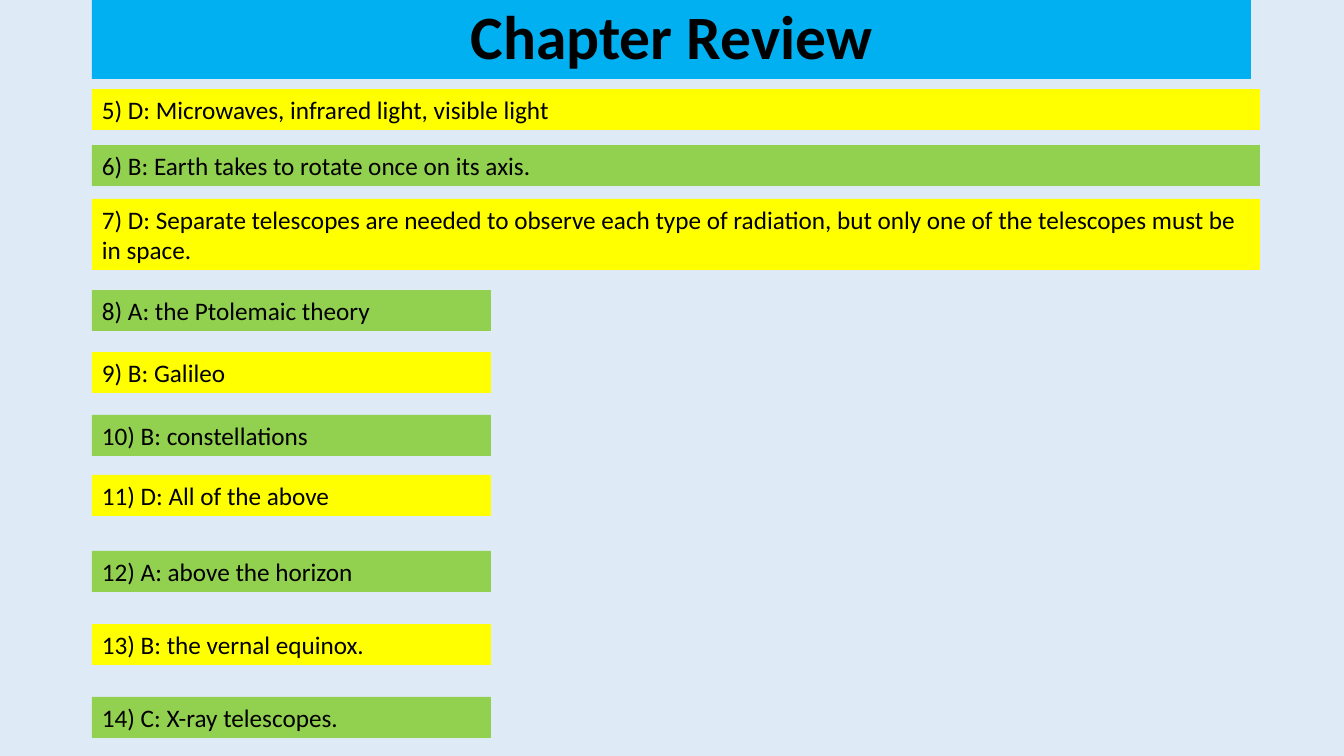
from pptx import Presentation
from pptx.dml.color import RGBColor
from pptx.enum.text import MSO_ANCHOR, MSO_AUTO_SIZE, PP_ALIGN
from pptx.util import Emu, Pt

PX = 914400 / 100.8
FONT = "Calibri"
COLORS = {
    "background": "DEEBF7",
    "banner": "00B0F0",
    "odd": "FFFF00",
    "even": "92D050",
    "text": "000000",
}
LEFT, WIDE, NARROW = 92, 1168, 399
LINE, TWO_LINES = 41, 71

# Number, answer, top, width, height
ANSWERS = [
    (5, "D: Microwaves, infrared light, visible light", 89, WIDE, LINE),
    (6, "B: Earth takes to rotate once on its axis.", 145, WIDE, LINE),
    (7, "D: Separate telescopes are needed to observe each type of radiation, "
        "but only one of the telescopes must be in space.", 199, WIDE, TWO_LINES),
    (8, "A: the Ptolemaic theory", 290, NARROW, LINE),
    (9, "B: Galileo", 352, NARROW, LINE),
    (10, "B: constellations", 415, NARROW, LINE),
    (11, "D: All of the above", 475, NARROW, LINE),
    (12, "A: above the horizon", 551, NARROW, LINE),
    (13, "B: the vernal equinox.", 624, NARROW, LINE),
    (14, "C: X-ray telescopes.", 697, NARROW, LINE),
]


def px(length):
    return Emu(round(length * PX))


def paint(fill, color):
    fill.solid()
    fill.fore_color.rgb = RGBColor.from_string(COLORS[color])


def write(paragraph, text, size, bold=False):
    run = paragraph.add_run()
    run.text = text
    run.font.name = FONT
    run.font.size = Pt(size)
    run.font.bold = bold
    run.font.color.rgb = RGBColor.from_string(COLORS["text"])


def add_banner(slide, left, top, width, height):
    banner = slide.shapes.title
    banner.left, banner.top = px(left), px(top)
    banner.width, banner.height = px(width), px(height)
    paint(banner.fill, "banner")
    frame = banner.text_frame
    frame.auto_size = MSO_AUTO_SIZE.NONE
    frame.vertical_anchor = MSO_ANCHOR.MIDDLE
    heading = frame.paragraphs[0]
    heading.alignment = PP_ALIGN.CENTER
    heading.line_spacing = 0.9
    write(heading, "Chapter Review", 44, bold=True)


def add_answer(slide, number, answer, left, top, width, height):
    strip = slide.shapes.add_textbox(px(left), px(top), px(width), px(height))
    paint(strip.fill, "odd" if number % 2 else "even")
    frame = strip.text_frame
    frame.word_wrap = True
    frame.auto_size = MSO_AUTO_SIZE.SHAPE_TO_FIT_TEXT
    write(frame.paragraphs[0], f"{number}) {answer}", 18)


def main():
    deck = Presentation()
    deck.slide_width, deck.slide_height = px(1344), px(756)
    slide = deck.slides.add_slide(deck.slide_layouts.get_by_name("Title Only"))
    paint(slide.background.fill, "background")

    # Title banner
    add_banner(slide, LEFT, 0, 1159, 79)

    # Answer strips, odd and even numbers in alternating colours
    for number, answer, top, width, height in ANSWERS:
        add_answer(slide, number, answer, LEFT, top, width, height)

    deck.save("out.pptx")


if __name__ == "__main__":
    main()
